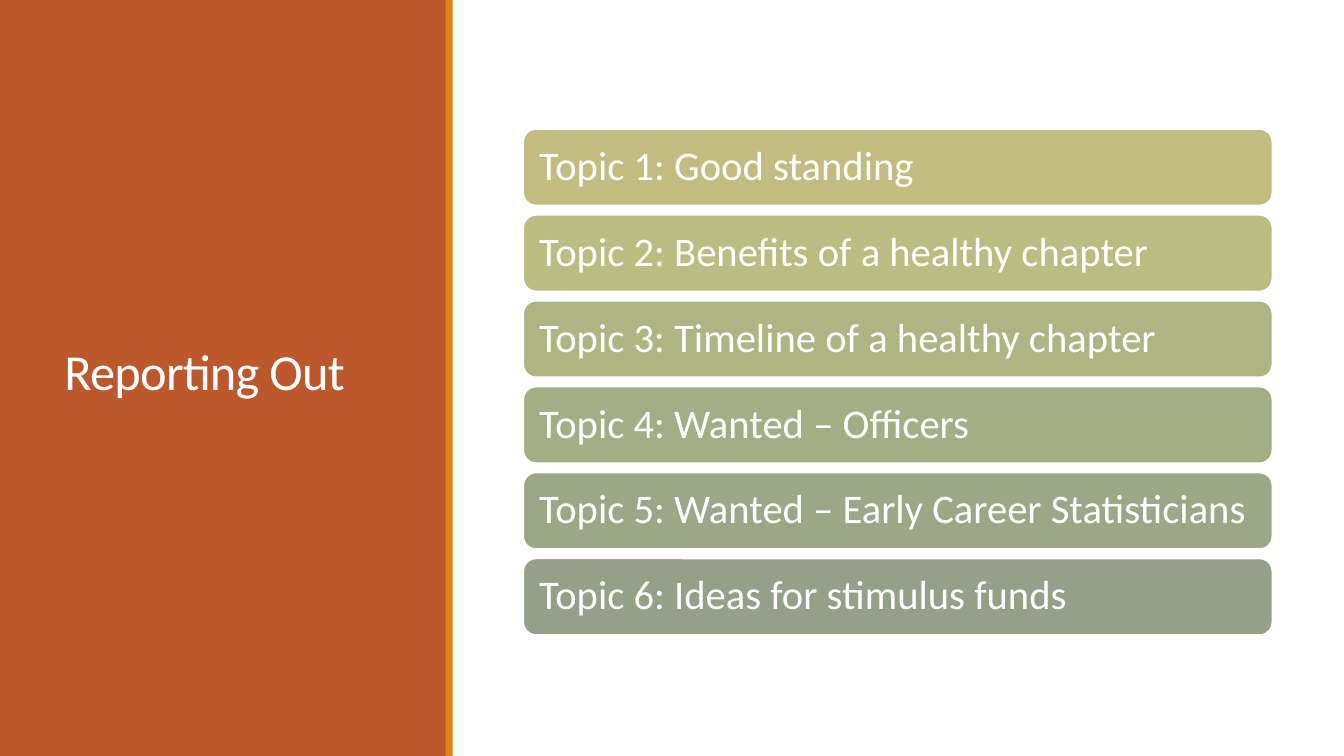
from dataclasses import dataclass

import pptx
import pptx.dml.color
import pptx.enum.shapes
import pptx.enum.text
import pptx.util

RGBColor = pptx.dml.color.RGBColor
Shape = pptx.enum.shapes.MSO_SHAPE

WHITE = RGBColor(0xFF, 0xFF, 0xFF)
RUST = RGBColor(0xBD, 0x58, 0x2C)
ORANGE = RGBColor(0xE4, 0x83, 0x12)
KHAKI = RGBColor(0xC2, 0xBC, 0x80)
OLIVE = RGBColor(0xBA, 0xBC, 0x81)
MOSS = RGBColor(0xAE, 0xB5, 0x82)
FERN = RGBColor(0xA3, 0xAE, 0x84)
SAGE = RGBColor(0x9B, 0xA7, 0x86)
SLATE = RGBColor(0x94, 0xA0, 0x88)

FONT = "Calibri"
SLIDE_WIDTH, SLIDE_HEIGHT = 13.33, 7.5
TOPIC_LEFT, TOPIC_TOP = 5.19, 1.28
TOPIC_WIDTH, TOPIC_HEIGHT = 7.43, 0.76
TOPIC_PITCH = 0.852
TOPIC_INSET = 0.12


@dataclass(frozen=True)
class Box:
    left: float
    top: float
    width: float
    height: float

    def emu(self) -> list[int]:
        return [pptx.util.Inches(n) for n in (self.left, self.top, self.width, self.height)]


@dataclass(frozen=True)
class Topic:
    wording: str
    fill: RGBColor


TOPICS = (
    Topic("Topic 1: Good standing", KHAKI),
    Topic("Topic 2: Benefits of a healthy chapter", OLIVE),
    Topic("Topic 3: Timeline of a healthy chapter", MOSS),
    Topic("Topic 4: Wanted – Officers", FERN),
    Topic("Topic 5: Wanted – Early Career Statisticians", SAGE),
    Topic("Topic 6: Ideas for stimulus funds", SLATE),
)


def add_block(slide, kind: Shape, box: Box, fill: RGBColor):
    block = slide.shapes.add_shape(kind, *box.emu())
    block.shadow.inherit = False
    block.fill.solid()
    block.fill.fore_color.rgb = fill
    block.line.fill.background()
    return block


def write(holder, wording: str, size: float, spacing: float):
    frame = holder.text_frame
    frame.word_wrap = True
    frame.vertical_anchor = pptx.enum.text.MSO_ANCHOR.MIDDLE
    paragraph = frame.paragraphs[0]
    paragraph.text = wording
    paragraph.alignment = pptx.enum.text.PP_ALIGN.LEFT
    paragraph.line_spacing = spacing
    paragraph.font.name = FONT
    paragraph.font.size = pptx.util.Pt(size)
    paragraph.font.color.rgb = WHITE
    return paragraph


def add_heading(slide) -> None:
    heading = slide.shapes.add_textbox(*Box(0.54, 0.57, 3.37, 6.31).emu())
    paragraph = write(heading, "Reporting Out", 36, 0.85)
    paragraph.runs[0].font._element.set("spc", "-50")


def add_topic(slide, row: int, topic: Topic) -> None:
    box = Box(TOPIC_LEFT, TOPIC_TOP + row * TOPIC_PITCH, TOPIC_WIDTH, TOPIC_HEIGHT)
    bar = add_block(slide, Shape.ROUNDED_RECTANGLE, box, topic.fill)
    bar.line.color.rgb = WHITE
    bar.line.width = pptx.util.Pt(1.25)
    frame = bar.text_frame
    frame.margin_left = frame.margin_right = pptx.util.Inches(TOPIC_INSET)
    frame.margin_top = frame.margin_bottom = pptx.util.Inches(TOPIC_INSET)
    write(bar, topic.wording, 29, 0.9)


def main() -> None:
    deck = pptx.Presentation()
    deck.slide_width = pptx.util.Inches(SLIDE_WIDTH)
    deck.slide_height = pptx.util.Inches(SLIDE_HEIGHT)
    slide = deck.slides.add_slide(deck.slide_layouts[6])

    add_block(slide, Shape.RECTANGLE, Box(0, 0, 4.43, SLIDE_HEIGHT), RUST)
    add_heading(slide)
    add_block(slide, Shape.RECTANGLE, Box(4.42, 0, 0.07, SLIDE_HEIGHT), ORANGE)
    for row, topic in enumerate(TOPICS):
        add_topic(slide, row, topic)

    deck.save("out.pptx")


if __name__ == "__main__":
    main()
